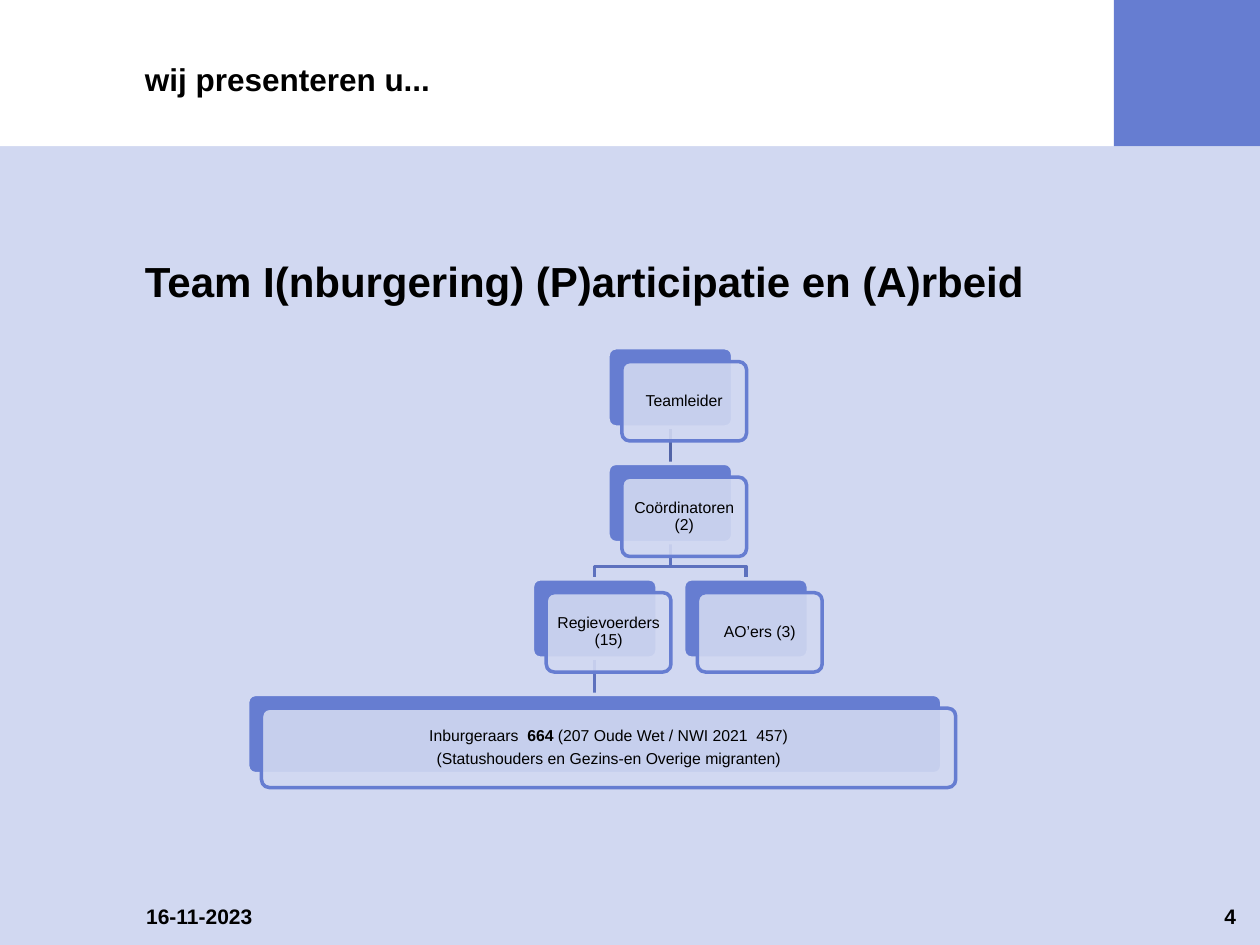
"""Build the team structure slide with a small organisation chart."""
from lxml import etree
from pptx import Presentation
from pptx.dml.color import RGBColor
from pptx.enum.shapes import MSO_CONNECTOR, MSO_SHAPE
from pptx.enum.text import MSO_ANCHOR, MSO_AUTO_SIZE, PP_ALIGN
from pptx.oxml.ns import qn
from pptx.util import Inches, Pt

RECT, ROUND = MSO_SHAPE.RECTANGLE, MSO_SHAPE.ROUNDED_RECTANGLE
STRAIGHT = MSO_CONNECTOR.STRAIGHT
TOP, MIDDLE, BOTTOM = MSO_ANCHOR.TOP, MSO_ANCHOR.MIDDLE, MSO_ANCHOR.BOTTOM
LEFT, CENTER, RIGHT = PP_ALIGN.LEFT, PP_ALIGN.CENTER, PP_ALIGN.RIGHT
NO_FIT = MSO_AUTO_SIZE.NONE
BLACK = RGBColor(0x00, 0x00, 0x00)
WHITE = RGBColor(0xFF, 0xFF, 0xFF)
BLUE = RGBColor(0x66, 0x7D, 0xD1)
PALE = RGBColor(0xD1, 0xD8, 0xF1)
MID = RGBColor(0x5D, 0x71, 0xBE)
DARK = RGBColor(0x52, 0x64, 0xA7)

deck = Presentation()
deck.slide_width, deck.slide_height = Inches(10), Inches(7.5)
slide = deck.slides.add_slide(deck.slide_layouts[5])
slide.background.fill.solid()
slide.background.fill.fore_color.rgb = PALE
shapes = slide.shapes


def add_box(kind, left, top, width, height, fill, line=None):
    box = shapes.add_shape(kind, *map(Inches, (left, top, width, height)))
    box.shadow.inherit = False
    box.fill.solid()
    box.fill.fore_color.rgb = fill
    if line is None:
        box.line.fill.background()
    else:
        box.line.color.rgb = line
        box.line.width = Pt(2)
        box.adjustments[0] = 0.1
    return box


def set_text(box, lines, size, bold, align, anchor, inset=0):
    frame = box.text_frame
    frame.word_wrap = True
    frame.auto_size = NO_FIT
    frame.vertical_anchor = anchor
    frame.margin_left = frame.margin_right = Inches(inset)
    frame.margin_top = frame.margin_bottom = Inches(inset)
    for i, parts in enumerate(lines):
        para = frame.add_paragraph() if i else frame.paragraphs[0]
        for j, part in enumerate(parts):
            run = para.add_run()
            run.text = part
            if j % 2:
                run.font.bold = True
        para.alignment = align
        font = para.font
        font.name, font.size, font.bold = "Arial", Pt(size), bold
        font.color.rgb = BLACK


band = 1.16
add_box(RECT, 0, 0, 10, band, WHITE)
add_box(RECT, 10 - band, 0, band, band, BLUE)

title = shapes.title
title.left, title.top, title.width, title.height = map(Inches, (1.15, 2.03, 7.23, 0.73))
set_text(title, [["Team I(nburgering) (P)articipatie en (A)rbeid"]], 24, True, LEFT, TOP)

labels = [
    ("wij presenteren u...", 1.15, 0.28, 7.51, 0.5, 18, LEFT, BOTTOM),
    ("16-11-2023", 1.16, 7.17, 2.08, 0.34, 12, LEFT, TOP),
    ("4", 9.41, 7.17, 0.4, 0.34, 12, RIGHT, TOP),
]
for text, left, top, width, height, size, align, anchor in labels:
    box = shapes.add_textbox(*map(Inches, (left, top, width, height)))
    set_text(box, [[text]], size, True, align, anchor)

mid, half = 5.32, 0.6
first, pitch, high, shift = 2.76, 0.917, 0.63, 0.11
west, east = mid - half, mid + half

for x, row, color in [(mid, 0, DARK), (west, 2, MID)]:
    end = first + (row + 1) * pitch
    link = shapes.add_connector(
        STRAIGHT, Inches(x), Inches(end - pitch + high), Inches(x), Inches(end))
    link.line.color.rgb = color
    link.line.width = Pt(2)
    etree.SubElement(link._element.spPr, qn("a:effectLst"))

fork = first + pitch + high
for x in (east, west):
    path = shapes.build_freeform(Inches(mid), Inches(fork))
    bend, end = Inches(fork + 0.19), Inches(first + 2 * pitch)
    path.add_line_segments(
        [(Inches(mid), bend), (Inches(x), bend), (Inches(x), end)], close=False)
    link = path.convert_to_shape()
    link.shadow.inherit = False
    link.fill.background()
    link.line.color.rgb = MID
    link.line.width = Pt(2)

nodes = [
    (mid, 0, 0.99, [["Teamleider"]]),
    (mid, 1, 0.99, [["Coördinatoren (2)"]]),
    (west, 2, 0.99, [["Regievoerders (15)"]]),
    (west, 3, 5.51, [
        ["Inburgeraars  ", "664", " (207 Oude Wet / NWI 2021  457)"],
        ["(Statushouders en Gezins-en Overige migranten)"],
    ]),
    (east, 2, 0.99, [["AO’ers (3)"]]),
]
for x, row, width, lines in nodes:
    left, top = x - width / 2, first + row * pitch
    add_box(ROUND, left, top, width, high, BLUE, PALE)
    card = add_box(ROUND, left + shift, top + shift, width, high, PALE, BLUE)
    tint = card._element.spPr.find(qn("a:solidFill"))[0]
    etree.SubElement(tint, qn("a:alpha"), val="90000")
    set_text(card, lines, 9, False, CENTER, MIDDLE, 0.04)
    for para in card.text_frame.paragraphs:
        para.line_spacing = 0.9
        para.space_after = Pt(3.15)

deck.save("out.pptx")
